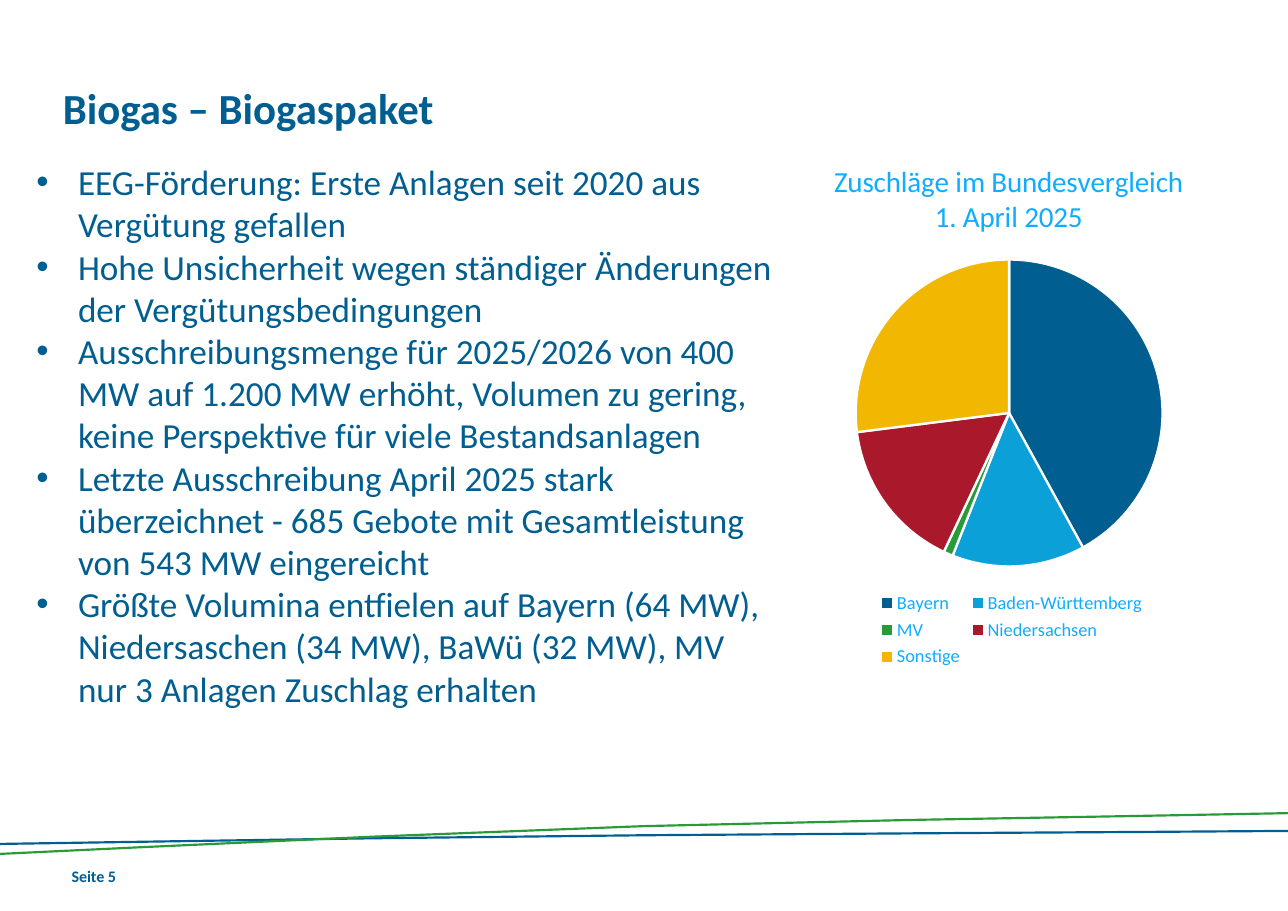
from lxml.etree import SubElement
from pptx import Presentation
from pptx.chart.data import CategoryChartData
from pptx.dml.color import RGBColor
from pptx.enum.chart import XL_CHART_TYPE as ChartType, XL_LEGEND_POSITION as LegendPosition
from pptx.enum.text import MSO_AUTO_SIZE as AutoSize
from pptx.oxml import parse_xml
from pptx.oxml.ns import nsdecls, qn
from pptx.util import Cm, Pt

FONT = "Calibri"
BLUE, SKY, GREEN, RED, YELLOW = "005E90", "0CA0D9", "289B38", "AA192B", "F2B700"
LABEL = "11ACFF"


def style(font, size, color, bold=False):
    font.name = FONT
    font.size = Pt(size)
    font.bold = bold
    font.color.rgb = RGBColor.from_string(color)


def add_text(left, top, width, height, lines, size, bold=False, wrap=True):
    box = page.shapes.add_textbox(Cm(left), Cm(top), Cm(width), Cm(height))
    frame = box.text_frame
    frame.word_wrap = wrap
    frame.auto_size = AutoSize.NONE
    frame.margin_left = frame.margin_right = frame.margin_top = frame.margin_bottom = 0
    for number, line in enumerate(lines):
        para = frame.add_paragraph() if number else frame.paragraphs[0]
        span = para.add_run()
        span.text = line
        style(span.font, size, BLUE, bold)
    return frame


deck = Presentation()
deck.slide_width, deck.slide_height = Cm(29.7), Cm(21)
page = deck.slides.add_slide(deck.slide_layouts[6])

wave_x = [0, 1.78, 8.66, 14.83, 20.96, 27.84, 29.7]
waves = [
    (BLUE, [19.43, 19.41, 19.28, 19.23, 19.18, 19.15, 19.13]),
    (GREEN, [19.66, 19.58, 19.23, 19.02, 18.85, 18.77, 18.72]),
]
steps = 3
thickness = 0.05
for color, wave_y in waves:
    controls = list(zip(wave_x, wave_y))
    edge = [controls[0]]
    for first in (0, 3):
        a, b, c, d = controls[first:first + 4]
        for step in range(1, steps + 1):
            t = step / steps
            u = 1 - t
            edge.append(tuple(
                u**3 * a[i] + 3 * u * u * t * b[i] + 3 * u * t * t * c[i] + t**3 * d[i]
                for i in (0, 1)))
    outline = edge + [(x, y + thickness) for x, y in reversed(edge)]
    corners = [(Cm(x), Cm(y)) for x, y in outline]
    builder = page.shapes.build_freeform(*corners[0])
    builder.add_line_segments(corners[1:], close=True)
    wave = builder.convert_to_shape()
    wave.shadow.inherit = False
    wave.fill.solid()
    wave.fill.fore_color.rgb = RGBColor.from_string(color)
    wave.line.fill.background()

add_text(1.65, 19.98, 1.8, 0.64, ["Seite 5"], 10.5, bold=True, wrap=False)
add_text(1.45, 1.88, 22, 1.57, ["Biogas – Biogaspaket"], 28, bold=True)

points = [
    "EEG-Förderung: Erste Anlagen seit 2020 aus Vergütung gefallen",
    "Hohe Unsicherheit wegen ständiger Änderungen der Vergütungsbedingungen",
    "Ausschreibungsmenge für 2025/2026 von 400 MW auf 1.200 MW erhöht, "
    "Volumen zu gering, keine Perspektive für viele Bestandsanlagen",
    "Letzte Ausschreibung April 2025 stark überzeichnet - 685 Gebote mit "
    "Gesamtleistung von 543 MW eingereicht",
    "Größte Volumina entfielen auf Bayern (64 MW), Niedersaschen (34 MW), "
    "BaWü (32 MW), MV nur 3 Anlagen Zuschlag erhalten",
]
body = add_text(0.84, 3.7, 17.2, 16.28, points, 23)
for para in body.paragraphs:
    props = para._p.get_or_add_pPr()
    props.set("marL", str(Cm(0.96)))
    props.set("indent", str(Cm(-0.96)))
    SubElement(props, qn("a:buFont"), typeface="Arial")
    SubElement(props, qn("a:buChar"), char="•")

shares = [
    ("Bayern", 42, BLUE),
    ("Baden-Württemberg", 14, SKY),
    ("MV", 1, GREEN),
    ("Niedersachsen", 16, RED),
    ("Sonstige", 27, YELLOW),
]
chart_data = CategoryChartData()
chart_data.categories = [name for name, value, color in shares]
chart_data.add_series("Series 1", [value for name, value, color in shares])
chart = page.shapes.add_chart(
    ChartType.PIE, Cm(16.84), Cm(3.3), Cm(12.86), Cm(12.2), chart_data).chart
style(chart.font, 10, BLUE)

chart.has_title = True
heading = chart.chart_title.text_frame
for number, line in enumerate(["Zuschläge im Bundesvergleich", "1. April 2025"]):
    para = heading.add_paragraph() if number else heading.paragraphs[0]
    span = para.add_run()
    span.text = line
    style(span.font, 19, LABEL)

chart.has_legend = True
chart.legend.position = LegendPosition.BOTTOM
chart.legend.include_in_layout = False
style(chart.legend.font, 12, LABEL)

pie = chart.plots[0]
pie.vary_by_categories = True
for number, (name, value, color) in enumerate(shares):
    slice_format = pie.series[0].points[number].format
    slice_format.fill.solid()
    slice_format.fill.fore_color.rgb = RGBColor.from_string(color)
    slice_format.line.color.rgb = RGBColor.from_string("FFFFFF")
    slice_format.line.width = Pt(1.5)

placements = [
    ("title", 1, {"x": 0.18, "y": 0.03}),
    ("legend", 1, {"x": 0.26, "y": 0.84, "w": 0.49, "h": 0.16}),
    ("plotArea", 0, {"x": 0.22, "y": 0.22, "w": 0.56, "h": 0.58}),
]
for tag, position, place in placements:
    part = chart._chartSpace.xpath(f".//c:{tag}")[0]
    for old in part.findall(qn("c:layout")):
        part.remove(old)
    layout = parse_xml(f"<c:layout {nsdecls('c')}/>")
    manual = SubElement(layout, qn("c:manualLayout"))
    if tag == "plotArea":
        SubElement(manual, qn("c:layoutTarget"), val="inner")
    for axis in "xy":
        SubElement(manual, qn(f"c:{axis}Mode"), val="edge")
    for key, value in place.items():
        SubElement(manual, qn(f"c:{key}"), val=str(value))
    part.insert(position, layout)

deck.save("out.pptx")
